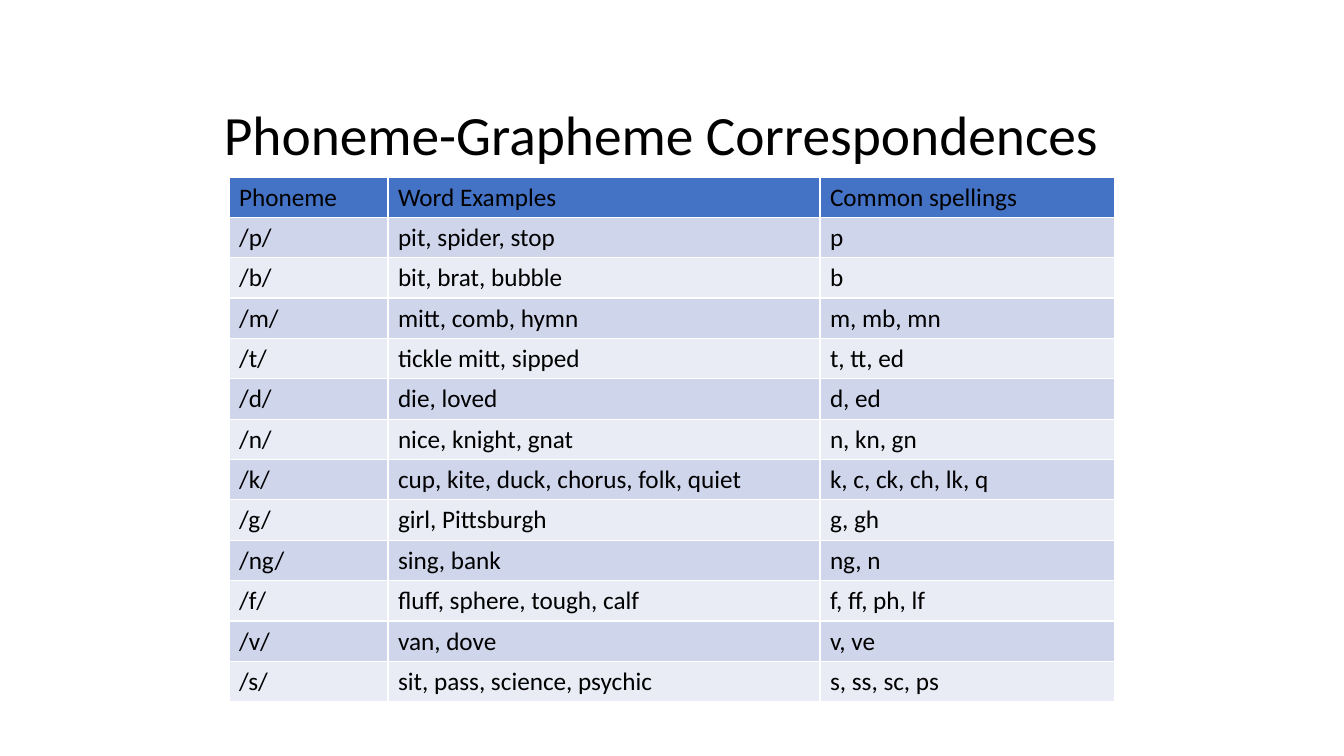
"""Build the phoneme-grapheme correspondences slide."""
from lxml.etree import SubElement
from pptx import Presentation
from pptx.dml.color import RGBColor as RGB
from pptx.enum.text import MSO_ANCHOR as ANCHOR
from pptx.oxml.ns import qn
from pptx.util import Pt

TITLE = "Phoneme-Grapheme Correspondences"
ROWS = [
    ("Phoneme", "Word Examples", "Common spellings"),
    ("/p/", "pit, spider, stop", "p"),
    ("/b/", "bit, brat, bubble", "b"),
    ("/m/", "mitt, comb, hymn", "m, mb, mn"),
    ("/t/", "tickle mitt, sipped", "t, tt, ed"),
    ("/d/", "die, loved", "d, ed"),
    ("/n/", "nice, knight, gnat", "n, kn, gn"),
    ("/k/", "cup, kite, duck, chorus, folk, quiet", "k, c, ck, ch, lk, q"),
    ("/g/", "girl, Pittsburgh", "g, gh"),
    ("/ng/", "sing, bank", "ng, n"),
    ("/f/", "fluff, sphere, tough, calf", "f, ff, ph, lf"),
    ("/v/", "van, dove", "v, ve"),
    ("/s/", "sit, pass, science, psychic", "s, ss, sc, ps"),
]

BLACK = RGB(0x00, 0x00, 0x00)
WHITE = RGB(0xFF, 0xFF, 0xFF)
HEADER = RGB(0x44, 0x72, 0xC4)
BANDS = (RGB(0xE9, 0xEB, 0xF5), RGB(0xCF, 0xD5, 0xEA))

SLIDE = (1344, 756)
TITLE_BOX = (214, 74, 916, 126)
TABLE_AT = (229, 177)
COL_WIDTHS = (159, 432, 295)
ROW_HEIGHT = 40
TITLE_FONT = {"name": "Calibri", "size": Pt(39.6)}
CELL_FONT = {"name": "Calibri", "size": Pt(18)}


def px(*lengths):
    return [round(n * 914400 / 100.8) for n in lengths]


def write(tf, text, font):
    p = tf.paragraphs[0]
    r = p.add_run()
    r.text = text
    for name, value in font.items():
        setattr(r.font, name, value)
    r.font.color.rgb = BLACK
    return p


def add_borders(cell):
    tc_pr = cell._tc.get_or_add_tcPr()
    for side in "LRTB":
        ln = SubElement(tc_pr, qn(f"a:ln{side}"), w=str(Pt(1)))
        fill = SubElement(ln, qn("a:solidFill"))
        SubElement(fill, qn("a:srgbClr"), val=str(WHITE))


def add_title(s):
    tf = s.shapes.add_textbox(*px(*TITLE_BOX)).text_frame
    tf.word_wrap = True
    tf.vertical_anchor = ANCHOR.MIDDLE
    write(tf, TITLE, TITLE_FONT).line_spacing = 0.9


def add_spellings(s):
    size = (sum(COL_WIDTHS), ROW_HEIGHT * len(ROWS))
    table = s.shapes.add_table(len(ROWS), len(COL_WIDTHS), *px(*TABLE_AT, *size)).table
    for col, width in zip(table.columns, px(*COL_WIDTHS)):
        col.width = width
    for i, row in enumerate(ROWS):
        for j, text in enumerate(row):
            cell = table.cell(i, j)
            write(cell.text_frame, text, CELL_FONT).font.bold = False
            cell.text_frame.paragraphs[0].runs[0].font.bold = False
            add_borders(cell)
            cell.fill.solid()
            cell.fill.fore_color.rgb = BANDS[i % 2] if i else HEADER


def main():
    prs = Presentation()
    prs.slide_width, prs.slide_height = px(*SLIDE)
    s = prs.slides.add_slide(prs.slide_layouts[6])
    add_title(s)
    add_spellings(s)
    prs.save("out.pptx")


if __name__ == "__main__":
    main()
